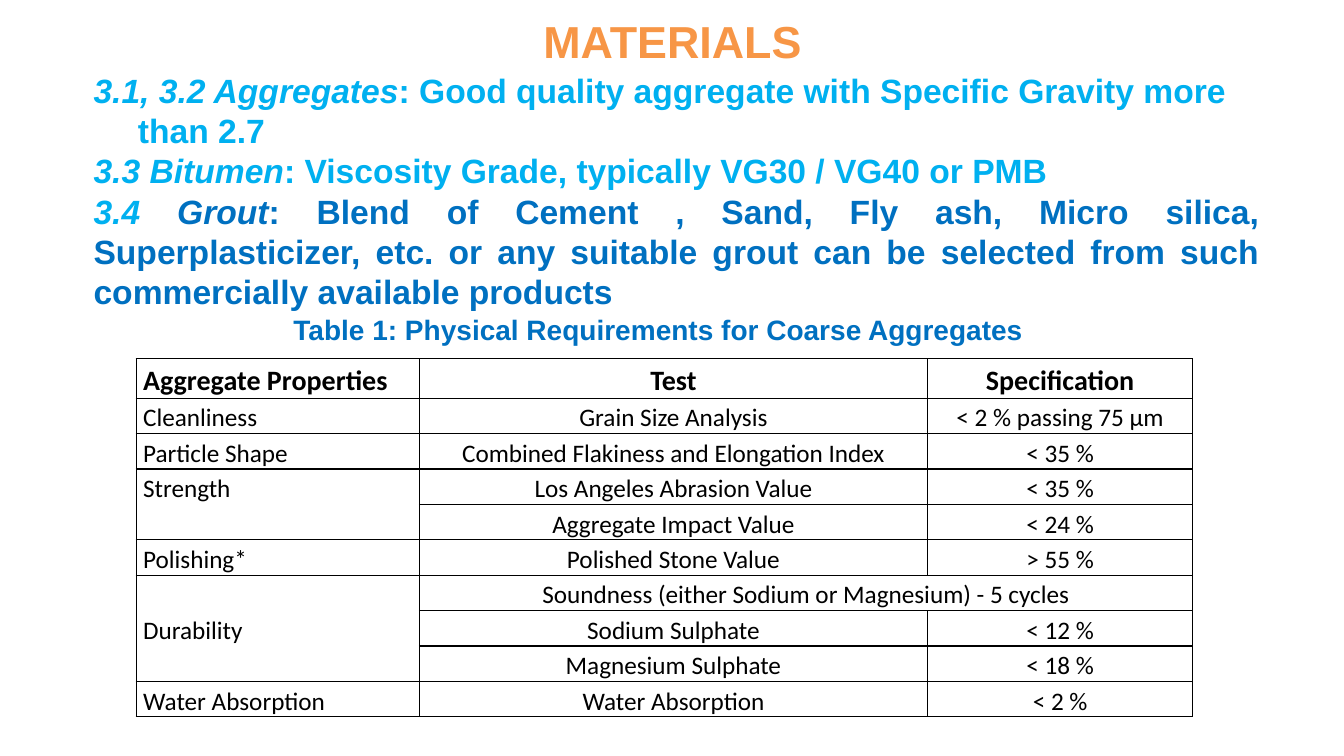
from lxml import etree
from pptx import Presentation
from pptx.dml.color import RGBColor
from pptx.enum.text import MSO_ANCHOR, PP_ALIGN
from pptx.oxml.ns import qn
from pptx.util import Inches, Pt

LEFT, CENTER, JUSTIFY = PP_ALIGN.LEFT, PP_ALIGN.CENTER, PP_ALIGN.JUSTIFY
TOP, MIDDLE = MSO_ANCHOR.TOP, MSO_ANCHOR.MIDDLE

THEME = {
    "heading_font": "Arial", "table_font": "Calibri",
    "orange": "F79646", "sky": "00B0F0", "blue": "0070C0", "black": "000000",
    "title": 32, "body": 24, "caption": 20, "header": 20, "cell": 18,
    "border": 1,
}

# Content: each paragraph is (alignment, hanging indent, runs of (text, colour, italic))
TITLE = [(CENTER, 0, [(" MATERIALS", "orange", False)])]
MATERIALS = [
    (LEFT, 0.44, [
        ("3.1, 3.2 Aggregates", "sky", True),
        (": Good quality aggregate with Specific Gravity more than 2.7", "sky", False)]),
    (LEFT, 0.44, [
        ("3.3 Bitumen", "sky", True),
        (": Viscosity Grade, typically VG30 / VG40 or PMB", "sky", False)]),
    (JUSTIFY, 0, [
        ("3.4 ", "sky", True),
        ("Grout", "blue", True),
        (": Blend of Cement , Sand, Fly ash, Micro silica, Superplasticizer, etc. "
         "or any suitable grout can be selected from such commercially available "
         "products", "blue", False)]),
]
CAPTION = [(CENTER, 0, [
    ("Table 1: Physical Requirements for Coarse Aggregates", "blue", False)])]

# None marks a cell covered by a merge
REQUIREMENTS = [
    ("Aggregate Properties", "Test", "Specification"),
    ("Cleanliness", "Grain Size Analysis", "< 2 % passing 75 µm"),
    ("Particle Shape", "Combined Flakiness and Elongation Index", "< 35 %"),
    ("Strength", "Los Angeles Abrasion Value", "< 35 %"),
    (None, "Aggregate Impact Value", "< 24 %"),
    ("Polishing*", "Polished Stone Value", "> 55 %"),
    ("Durability", "Soundness (either Sodium or Magnesium) - 5 cycles", None),
    (None, "Sodium Sulphate", "< 12 %"),
    (None, "Magnesium Sulphate", "< 18 %"),
    ("Water Absorption", "Water Absorption", "< 2 %"),
]
MERGES = [((3, 0), (4, 0)), ((6, 0), (8, 0)), ((6, 1), (6, 2))]
COL_WIDTHS = [2.81, 5.04, 2.63]
ROW_HEIGHTS = [0.37, 0.3] + [0.32] * 7 + [0.3]


def add_run(p, text, font, size, color, bold=False, italic=False):
    r = p.add_run()
    r.text = text
    r.font.name, r.font.size = font, Pt(size)
    r.font.bold, r.font.italic = bold, italic
    r.font.color.rgb = RGBColor.from_string(THEME[color])


def add_text(slide, box, paragraphs, size, anchor=TOP):
    tf = slide.shapes.add_textbox(*map(Inches, box)).text_frame
    tf.word_wrap = True
    tf.vertical_anchor = anchor
    for i, (align, hang, runs) in enumerate(paragraphs):
        p = tf.add_paragraph() if i else tf.paragraphs[0]
        p.alignment = align
        if hang:
            pPr = p._p.get_or_add_pPr()
            pPr.set("marL", str(Inches(hang)))
            pPr.set("indent", str(-Inches(hang)))
        for text, color, italic in runs:
            add_run(p, text, THEME["heading_font"], size, color, True, italic)


def add_borders(cell):
    tcPr = cell._tc.get_or_add_tcPr()
    for i, side in enumerate(("lnL", "lnR", "lnT", "lnB")):
        ln = etree.Element(qn("a:" + side), w=str(Pt(THEME["border"])))
        fill = etree.SubElement(ln, qn("a:solidFill"))
        etree.SubElement(fill, qn("a:srgbClr"), val=THEME["black"])
        tcPr.insert(i, ln)


def add_requirements(slide, left, top):
    table = slide.shapes.add_table(
        len(REQUIREMENTS), len(COL_WIDTHS), Inches(left), Inches(top),
        Inches(sum(COL_WIDTHS)), Inches(sum(ROW_HEIGHTS))).table
    table.first_row = table.horz_banding = False
    for column, width in zip(table.columns, COL_WIDTHS):
        column.width = Inches(width)
    for row, height in zip(table.rows, ROW_HEIGHTS):
        row.height = Inches(height)
    for start, end in MERGES:
        table.cell(*start).merge(table.cell(*end))

    for i, texts in enumerate(REQUIREMENTS):
        for j, text in enumerate(texts):
            cell = table.cell(i, j)
            cell.margin_left = cell.margin_right = Inches(0.07)
            cell.margin_top = cell.margin_bottom = 0
            cell.vertical_anchor = MIDDLE if text == "Durability" else TOP
            cell.fill.background()
            add_borders(cell)
            p = cell.text_frame.paragraphs[0]
            p.line_spacing = 1.15
            p.alignment = CENTER if j else JUSTIFY
            if text:
                size = THEME["cell"] if i else THEME["header"]
                add_run(p, text, THEME["table_font"], size, "black", bold=i == 0)


def main():
    prs = Presentation()
    prs.slide_width, prs.slide_height = Inches(13.33), Inches(7.5)
    slide = prs.slides.add_slide(prs.slide_layouts[6])

    # Requirements table
    add_requirements(slide, 1.35, 3.56)

    # Title, material list and table caption
    add_text(slide, (0.61, 0, 12, 0.81), TITLE, THEME["title"], MIDDLE)
    add_text(slide, (0.83, 0.64, 11.76, 2.52), MATERIALS, THEME["body"])
    add_text(slide, (2.48, 3.05, 8.1, 0.44), CAPTION, THEME["caption"])

    prs.save("out.pptx")


if __name__ == "__main__":
    main()
